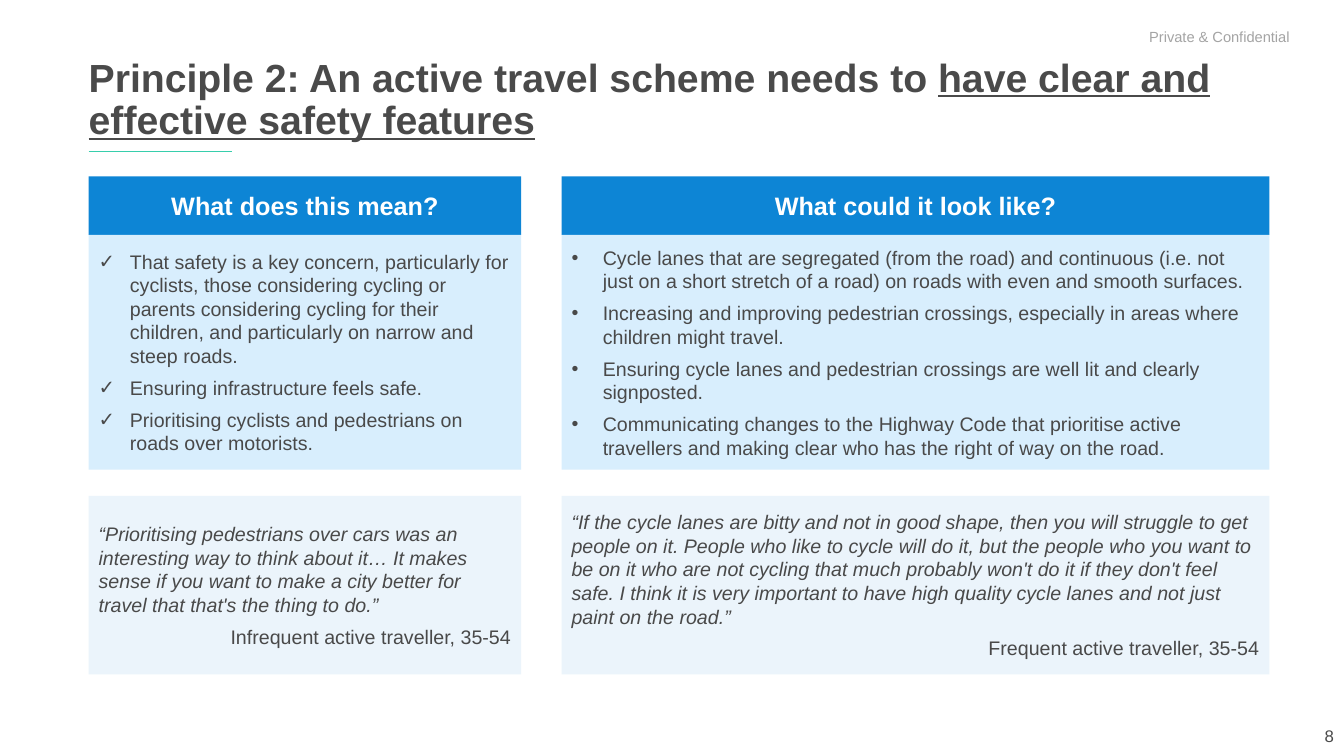
from lxml import etree
from pptx import Presentation
from pptx.dml.color import RGBColor
from pptx.enum.shapes import MSO_CONNECTOR, MSO_SHAPE
from pptx.enum.text import MSO_ANCHOR, PP_ALIGN
from pptx.oxml.ns import qn
from pptx.util import Inches, Pt

STRAIGHT = MSO_CONNECTOR.STRAIGHT
RECTANGLE = MSO_SHAPE.RECTANGLE
TOP, MIDDLE = MSO_ANCHOR.TOP, MSO_ANCHOR.MIDDLE
LEFT, CENTER, RIGHT = PP_ALIGN.LEFT, PP_ALIGN.CENTER, PP_ALIGN.RIGHT

# Grid in inches: (start, extent)
COLUMNS = [(0.88, 4.29), (5.57, 7.02)]
ROWS = {"heading": (1.75, 0.58), "points": (2.33, 2.33), "quote": (4.92, 1.77)}

TITLE = [
    ("Principle 2: An active travel scheme needs to ", {}),
    ("have clear and effective safety features", {"underline": True}),
]
TOPICS = [
    {
        "heading": "What does this mean?",
        "bullet": "✓",
        "points": [
            "That safety is a key concern, particularly for cyclists, those considering "
            "cycling or parents considering cycling for their children, and particularly "
            "on narrow and steep roads.",
            "Ensuring infrastructure feels safe.",
            "Prioritising cyclists and pedestrians on roads over motorists.",
        ],
        "quote": "“Prioritising pedestrians over cars was an interesting way to think about "
                 "it… It makes sense if you want to make a city better for travel that "
                 "that's the thing to do.”",
        "speaker": "Infrequent active traveller, 35-54",
    },
    {
        "heading": "What could it look like?",
        "bullet": "•",
        "points": [
            "Cycle lanes that are segregated (from the road) and continuous (i.e. not just "
            "on a short stretch of a road) on roads with even and smooth surfaces.",
            "Increasing and improving pedestrian crossings, especially in areas where "
            "children might travel.",
            "Ensuring cycle lanes and pedestrian crossings are well lit and clearly "
            "signposted.",
            "Communicating changes to the Highway Code that prioritise active travellers "
            "and making clear who has the right of way on the road.",
        ],
        "quote": "“If the cycle lanes are bitty and not in good shape, then you will struggle "
                 "to get people on it. People who like to cycle will do it, but the people "
                 "who you want to be on it who are not cycling that much probably won't do "
                 "it if they don't feel safe. I think it is very important to have high "
                 "quality cycle lanes and not just paint on the road.”",
        "speaker": "Frequent active traveller, 35-54",
    },
]


def color(hex_code):
    return RGBColor.from_string(hex_code)


class PrincipleSlide:
    FONT = "Arial"
    TITLE_INK, INK, MUTED, WHITE = "4A4A4A", "494949", "A4A4A4", "FFFFFF"
    BLUE, PALE_BLUE, MIST, GREEN = "0D85D5", "D8EEFD", "EBF4FB", "37CEAC"
    HANGING_INDENT = Inches(0.31)

    def __init__(self, slide):
        self.slide = slide

    def panel(self, column, row, fill):
        """Add a filled rectangle in a grid cell and return its text frame."""
        (left, width), (top, height) = COLUMNS[column], ROWS[row]
        cell = [Inches(length) for length in (left, top, width, height)]
        rectangle = self.slide.shapes.add_shape(RECTANGLE, *cell)
        rectangle.shadow.inherit = False
        rectangle.fill.solid()
        rectangle.fill.fore_color.rgb = color(fill)
        rectangle.line.fill.background()
        return self.prepare(rectangle.text_frame, MIDDLE)

    def text_box(self, left, top, width, height, anchor=MIDDLE):
        area = [Inches(length) for length in (left, top, width, height)]
        return self.prepare(self.slide.shapes.add_textbox(*area).text_frame, anchor)

    def prepare(self, frame, anchor):
        frame.word_wrap = True
        frame.vertical_anchor = anchor
        return frame

    def paragraph(self, frame, runs, size, ink, align=LEFT, bullet=None, spacing=None, **style):
        """Fill the empty first paragraph of the frame, or append a new one."""
        first = frame.paragraphs[0]
        paragraph = frame.add_paragraph() if first.runs else first
        layout = {"alignment": align, **(spacing or {})}
        for name, value in layout.items():
            setattr(paragraph, name, value)
        if bullet:
            self.add_bullet(paragraph, bullet)
        for text, extra in runs:
            run = paragraph.add_run()
            run.text = text
            font = {"name": self.FONT, "size": Pt(size), **style, **extra}
            for name, value in font.items():
                setattr(run.font, name, value)
            run.font.color.rgb = color(ink)

    def add_bullet(self, paragraph, symbol):
        properties = paragraph._p.get_or_add_pPr()
        properties.set("marL", str(self.HANGING_INDENT))
        properties.set("indent", str(-self.HANGING_INDENT))
        etree.SubElement(properties, qn("a:buFont")).set("typeface", self.FONT)
        etree.SubElement(properties, qn("a:buChar")).set("char", symbol)

    def rule(self, left, top, width):
        ends = [Inches(length) for length in (left, top, left + width, top)]
        line = self.slide.shapes.add_connector(STRAIGHT, *ends)
        line.line.color.rgb = color(self.GREEN)
        line.line.width = Pt(1)
        etree.SubElement(line._element.spPr, qn("a:effectLst"))

    def title(self, runs):
        frame = self.text_box(0.88, 0.53, 11.7, 0.87, TOP)
        frame.margin_left = 0
        self.paragraph(frame, runs, 28, self.TITLE_INK, spacing={"line_spacing": 0.9}, bold=True)

    def topic(self, column, content):
        """Add one column: heading, bulleted points and a quote with its speaker."""
        after = {"space_after": Pt(6)}
        heading = self.panel(column, "heading", self.BLUE)
        self.paragraph(heading, [(content["heading"], {})], 18, self.WHITE, CENTER, bold=True)
        points = self.panel(column, "points", self.PALE_BLUE)
        for point in content["points"]:
            self.paragraph(points, [(point, {})], 14, self.INK,
                           bullet=content["bullet"], spacing=after)
        quote = self.panel(column, "quote", self.MIST)
        self.paragraph(quote, [(content["quote"], {})], 14, self.INK, spacing=after, italic=True)
        self.paragraph(quote, [(content["speaker"], {})], 14, self.INK, RIGHT)


def main():
    deck = Presentation()
    deck.slide_width, deck.slide_height = Inches(13.33), Inches(7.5)
    page = PrincipleSlide(deck.slides.add_slide(deck.slide_layouts[6]))

    page_number = page.text_box(10.33, 7.1, 3, 0.4)
    page.paragraph(page_number, [("8", {})], 12, page.TITLE_INK, RIGHT)
    confidentiality = page.text_box(11.3, 0.19, 1.63, 0.35)
    page.paragraph(confidentiality, [("Private & Confidential", {})], 10.5, page.MUTED)
    page.rule(0.88, 1.5, 1.42)
    page.title(TITLE)
    for column, content in enumerate(TOPICS):
        page.topic(column, content)

    deck.save("out.pptx")


if __name__ == "__main__":
    main()
